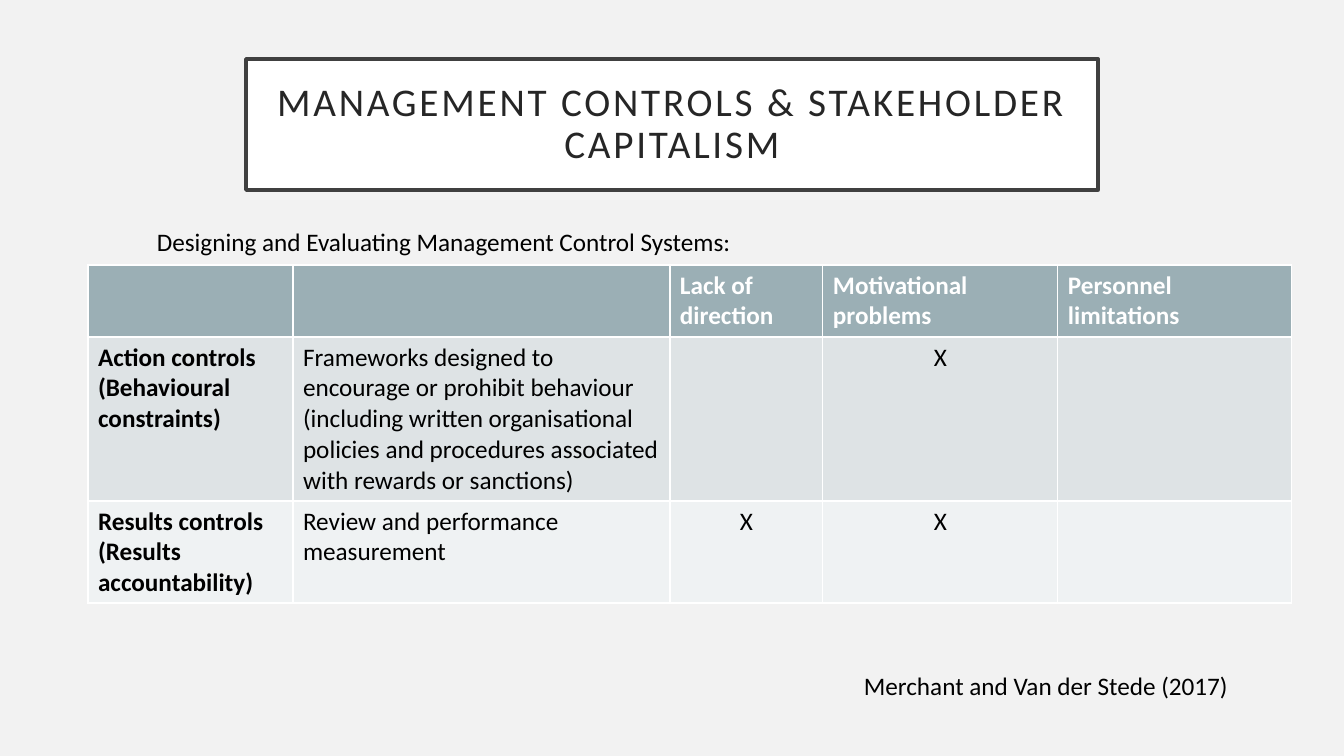
"""Build the slide on management controls and stakeholder capitalism."""
from dataclasses import dataclass

from lxml.etree import SubElement
from pptx import Presentation
from pptx.dml.color import RGBColor as Rgb
from pptx.enum.text import MSO_ANCHOR as Anchor, MSO_AUTO_SIZE as Fit, PP_ALIGN as Align
from pptx.oxml.ns import qn
from pptx.util import Pt


@dataclass(frozen=True)
class Theme:
    """Colours and type sizes."""
    font: str = "Calibri"
    back: str = "F2F2F2"
    white: str = "FFFFFF"
    ink: str = "000000"
    dark: str = "262626"
    edge: str = "404040"
    head: str = "9BAFB5"
    bands: tuple[str, str] = ("DEE3E5", "EFF2F3")
    title: int = 28
    body: int = 18


@dataclass(frozen=True)
class Box:
    """A rectangle in px."""
    left: int
    top: int
    width: int
    height: int


@dataclass(frozen=True)
class Note:
    """A line of plain text and its place."""
    box: Box
    text: str
    align: Align


@dataclass(frozen=True)
class Row:
    """A table row: height, fill, text colour and cell texts."""
    height: int
    fill: str
    ink: str
    cells: tuple[str, ...]


THEME = Theme()
SCALE = 914400 / 100.8
TITLE = Box(246, 59, 852, 131)
GRID = Box(88, 265, 1204, 338)
COLS = (205, 377, 153, 235, 234)
NOTES = (
    Note(Box(147, 221, 1001, 436), "Designing and Evaluating Management Control Systems:", Align.JUSTIFY),
    Note(Box(854, 665, 417, 40), "Merchant and Van der Stede (2017)", Align.LEFT),
)
ROWS = (
    Row(72, THEME.head, THEME.white,
        ("", "", "Lack of direction", "Motivational problems", "Personnel limitations")),
    Row(164, THEME.bands[0], THEME.ink,
        ("Action controls\n(Behavioural constraints)",
         "Frameworks designed to encourage or prohibit behaviour (including written "
         "organisational policies and procedures associated with rewards or sanctions)",
         "", "X", "")),
    Row(102, THEME.bands[1], THEME.ink,
        ("Results controls\n(Results accountability)",
         "Review and performance measurement", "X", "X", "")),
)


def px(size: int) -> int:
    """Turn px into EMU."""
    return round(size * SCALE)


def place(box: Box) -> tuple[int, ...]:
    """Give the EMU place of a box."""
    return tuple(map(px, (box.left, box.top, box.width, box.height)))


def apply(item, **form) -> None:
    """Set attributes from format values."""
    for key, value in form.items():
        setattr(item, key, value)


def write(frame, text: str, size: int, ink: str, bold: bool = False, align: Align = Align.LEFT) -> None:
    """Fill a text frame with formatted text."""
    frame.text = text
    for para in frame.paragraphs:
        para.alignment = align
        for font in (para.font, *(run.font for run in para.runs)):
            apply(font, name=THEME.font, size=Pt(size), bold=bold)
            font.color.rgb = Rgb.from_string(ink)


def border(cell) -> None:
    """Draw thin white lines round a cell."""
    props = cell._tc.get_or_add_tcPr()
    for spot, side in enumerate(("lnL", "lnR", "lnT", "lnB")):
        line = SubElement(props, qn(f"a:{side}"), w=str(Pt(1)))
        fill = SubElement(line, qn("a:solidFill"))
        SubElement(fill, qn("a:srgbClr"), val=THEME.white)
        props.insert(spot, line)


def head(slide, text: str) -> None:
    """Format the title placeholder."""
    shape = slide.shapes.title
    left, top, width, height = place(TITLE)
    apply(shape, left=left, top=top, width=width, height=height)
    shape.fill.solid()
    shape.fill.fore_color.rgb = Rgb.from_string(THEME.white)
    shape.line.color.rgb = Rgb.from_string(THEME.edge)
    shape.line.width = Pt(2.5)
    frame = shape.text_frame
    pad = px(20)
    apply(frame, margin_left=pad, margin_right=pad, margin_top=pad, margin_bottom=pad,
          word_wrap=True, auto_size=Fit.NONE, vertical_anchor=Anchor.MIDDLE)
    write(frame, text, THEME.title, THEME.dark, align=Align.CENTER)
    para = frame.paragraphs[0]
    para.line_spacing = 0.9
    para.runs[0]._r.get_or_add_rPr().set("spc", "200")


def label(slide, note: Note) -> None:
    """Add a text box."""
    frame = slide.shapes.add_textbox(*place(note.box)).text_frame
    frame.word_wrap = True
    write(frame, note.text, THEME.body, THEME.ink, align=note.align)


def grid(slide) -> None:
    """Add the table of controls."""
    table = slide.shapes.add_table(len(ROWS), len(COLS), *place(GRID)).table
    for col, width in zip(table.columns, COLS):
        col.width = px(width)
    for y, (line, row) in enumerate(zip(table.rows, ROWS)):
        line.height = px(row.height)
        for x, (cell, text) in enumerate(zip(line.cells, row.cells)):
            cell.fill.solid()
            cell.fill.fore_color.rgb = Rgb.from_string(row.fill)
            border(cell)
            align = Align.CENTER if text == "X" else Align.LEFT
            write(cell.text_frame, text, THEME.body, row.ink, y == 0 or x == 0, align)


def main() -> None:
    """Build and save the slide."""
    deck = Presentation()
    apply(deck, slide_width=px(1344), slide_height=px(756))
    slide = deck.slides.add_slide(deck.slide_layouts[5])
    back = slide.background.fill
    back.solid()
    back.fore_color.rgb = Rgb.from_string(THEME.back)
    head(slide, "MANAGEMENT CONTROLS & STAKEHOLDER CAPITALISM")
    for note in NOTES:
        label(slide, note)
    grid(slide)
    deck.save("out.pptx")


if __name__ == "__main__":
    main()
